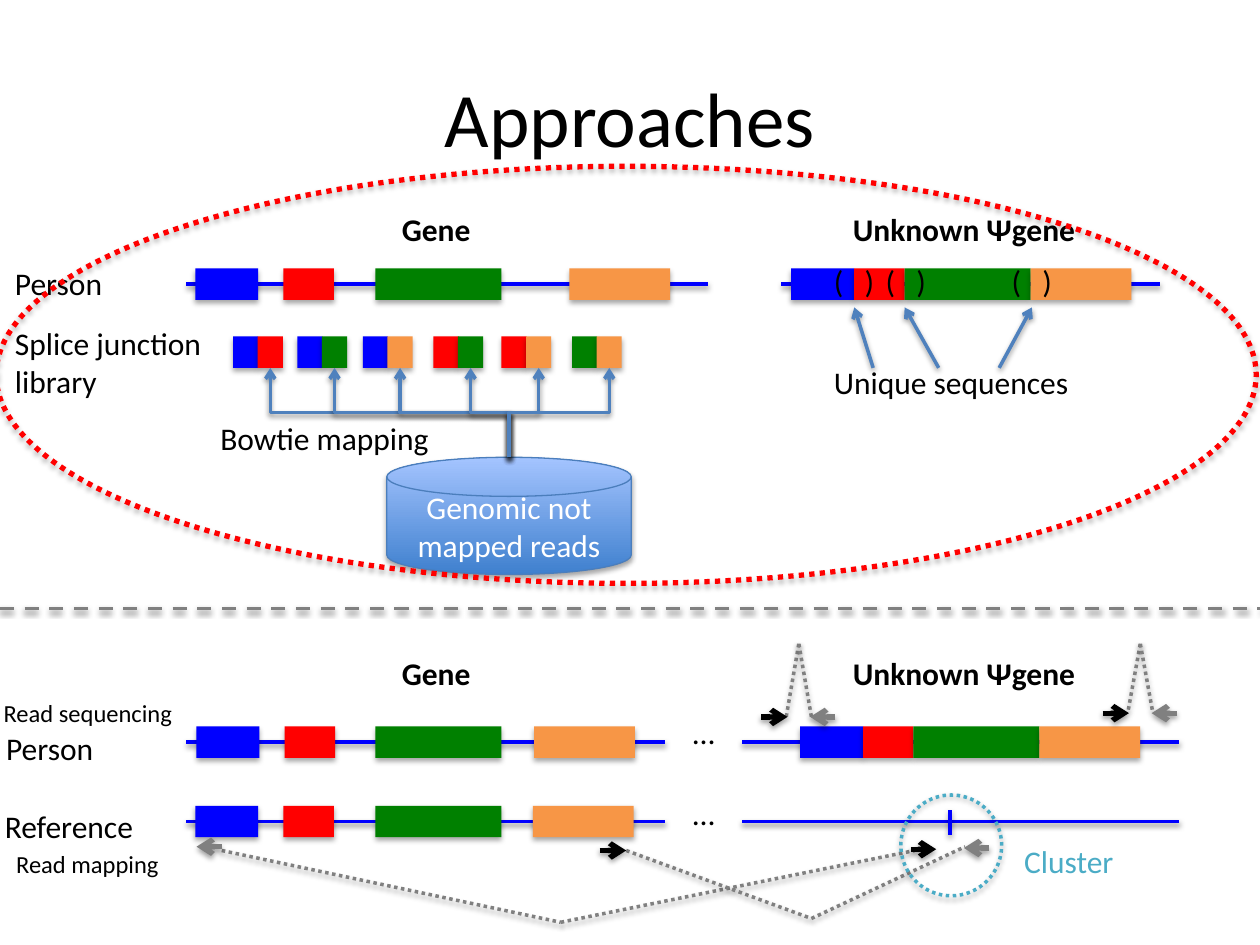
from dataclasses import dataclass
from itertools import accumulate, combinations

from lxml import etree
from pptx import Presentation
from pptx.dml.color import RGBColor
from pptx.enum.dml import MSO_LINE
from pptx.enum.shapes import MSO_CONNECTOR, MSO_SHAPE
from pptx.enum.text import MSO_ANCHOR, MSO_AUTO_SIZE, PP_ALIGN
from pptx.oxml.ns import qn
from pptx.util import Inches, Pt

STRAIGHT, ELBOW = MSO_CONNECTOR.STRAIGHT, MSO_CONNECTOR.ELBOW
RECT, OVAL, DISK = MSO_SHAPE.RECTANGLE, MSO_SHAPE.OVAL, MSO_SHAPE.FLOWCHART_MAGNETIC_DISK
DOTS, DASHES = MSO_LINE.ROUND_DOT, MSO_LINE.DASH
CENTER, MIDDLE = PP_ALIGN.CENTER, MSO_ANCHOR.MIDDLE
FIT_TEXT = MSO_AUTO_SIZE.SHAPE_TO_FIT_TEXT

FONT = "Calibri"
BLACK, WHITE, GREY = "000000", "FFFFFF", "808080"
BLUE, RED, GREEN, ORANGE = "0000FF", "FF0000", "008000", "F79646"
STEEL, TEAL = "4F81BD", "4BACC6"

# The slide is a grid of 100 columns and 75 rows
COLUMNS, ROWS = 100, 75
EXON_HEIGHT = 2.5


@dataclass(frozen=True)
class Exon:
    width: float
    color: str


@dataclass(frozen=True)
class Label:
    text: str
    left: float
    top: float
    width: float
    height: float = 4
    size: int = 18
    color: str = BLACK
    bold: bool = False


@dataclass(frozen=True)
class Strand:
    row: float
    start: float
    end: float
    exon_lefts: tuple = ()


EXONS = (Exon(5, BLUE), Exon(4, RED), Exon(10, GREEN), Exon(8, ORANGE))


def spliced(first_left: float) -> tuple:
    """Left edges of the exons when they touch each other."""
    return tuple(accumulate((exon.width for exon in EXONS[:-1]), initial=first_left))


STRANDS = (
    Strand(22.55, 14.8, 56.2, (15.5, 22.5, 29.8, 45.2)),
    Strand(22.55, 62, 92.1, spliced(62.8)),
    Strand(58.9, 14.8, 52.8, (15.6, 22.6, 29.8, 42.4)),
    Strand(58.9, 58.9, 93.6, spliced(63.5)),
    Strand(65.2, 14.8, 52.8, (15.5, 22.5, 29.8, 42.3)),
    Strand(65.2, 58.9, 93.6),
)
JUNCTION_LEFTS = (18.5, 23.6, 28.8, 34.4, 39.8, 45.4)

LABELS = (
    Label("Person", 0.2, 20.5, 9.1),
    Label("Splice junction\nlibrary", 0.2, 25.2, 16.9, 7.1),
    Label("Bowtie mapping", 16.5, 32.8, 18.7),
    Label("Unique sequences", 65.2, 28.3, 20.8),
    *(Label("(   )", left, 20.3, 5.3) for left in (65.2, 69.3, 79.3)),
    *(Label("Gene", 30.9, top, 7.5, bold=True) for top in (16.2, 51.4)),
    *(Label("Unknown Ψgene", 66.7, top, 19.9, bold=True) for top in (16.2, 51.4)),
    *(Label("…", 54, top, 3.8) for top in (56.1, 62.5)),
    Label("Person", -0.5, 57.4, 9.1),
    Label("Reference", -0.6, 63.6, 12.5),
    Label("Read mapping", 0.3, 66.9, 13.4, 3.4, size=14),
    Label("Read sequencing", -0.7, 54.9, 15.5, 3.4, size=14),
    Label("Cluster", 80.3, 66.3, 9.2, color=TEAL),
)

prs = Presentation()
prs.slide_width, prs.slide_height = Inches(10), Inches(7.5)
slide = prs.slides.add_slide(prs.slide_layouts[5])


def x(columns: float) -> int:
    return round(prs.slide_width * columns / COLUMNS)


def y(rows: float) -> int:
    return round(prs.slide_height * rows / ROWS)


def rgb(color: str) -> RGBColor:
    return RGBColor.from_string(color)


def add_shadow(part, opacity: int, distance: float) -> None:
    effects = etree.SubElement(part._element.spPr, qn("a:effectLst"))
    outer = etree.SubElement(effects, qn("a:outerShdw"), blurRad=str(Pt(3.1)),
                             dist=str(Pt(distance)), dir="5400000", rotWithShape="0")
    tint = etree.SubElement(outer, qn("a:srgbClr"), val=BLACK)
    etree.SubElement(tint, qn("a:alpha"), val=str(opacity * 1000))


def style_line(line, color: str, width: float, dash=None) -> None:
    line.color.rgb = rgb(color)
    line.width = Pt(width)
    if dash is not None:
        line.dash_style = dash


def format_text(frame, size: int, color: str, bold: bool = False) -> None:
    for paragraph in frame.paragraphs:
        for run in paragraph.runs:
            run.font.name, run.font.size, run.font.bold = FONT, Pt(size), bold
            run.font.color.rgb = rgb(color)


def add_label(label: Label) -> None:
    box = slide.shapes.add_textbox(x(label.left), y(label.top), x(label.width), y(label.height))
    frame = box.text_frame
    frame.text = label.text
    frame.word_wrap = False
    frame.auto_size = FIT_TEXT
    format_text(frame, label.size, label.color, label.bold)


def add_line(start: tuple, end: tuple, color: str, width: float = 2, dash=None,
             arrow: bool = False, kind=STRAIGHT):
    line = slide.shapes.add_connector(kind, x(start[0]), y(start[1]), x(end[0]), y(end[1]))
    style_line(line.line, color, width, dash)
    if arrow:
        etree.SubElement(line.line._get_or_add_ln(), qn("a:tailEnd"), type="arrow")
    add_shadow(line, 38, 1.6)
    return line


def add_upward_elbow(start: tuple, end: tuple) -> None:
    """Elbow that leaves and arrives vertically: a level one, turned a quarter."""
    middle_x, middle_y = (start[0] + end[0]) / 2, (start[1] + end[1]) / 2
    leftward = end[0] < start[0]
    half_rise = (start[1] - end[1]) / 2 * (1 if leftward else -1)
    half_run = abs(end[0] - start[0]) / 2
    elbow = add_line((middle_x - half_rise, middle_y + half_run),
                     (middle_x + half_rise, middle_y - half_run), STEEL, arrow=True, kind=ELBOW)
    elbow._element.spPr.find(qn("a:xfrm")).set("rot", "16200000" if leftward else "5400000")


def add_block(left: float, top: float, width: float, color: str) -> None:
    block = slide.shapes.add_shape(RECT, x(left), y(top), x(width), y(EXON_HEIGHT))
    block.fill.solid()
    block.fill.fore_color.rgb = rgb(color)
    block.line.fill.background()
    add_shadow(block, 35, 1.8)


def add_strand(strand: Strand) -> None:
    add_line((strand.start, strand.row), (strand.end, strand.row), BLUE)
    for exon, left in zip(EXONS, strand.exon_lefts):
        add_block(left, strand.row - EXON_HEIGHT / 2, exon.width, exon.color)


def add_ring(left: float, top: float, width: float, height: float, color: str, weight: float) -> None:
    ring = slide.shapes.add_shape(OVAL, x(left), y(top), x(width), y(height))
    ring.fill.background()
    style_line(ring.line, color, weight, DOTS)
    add_shadow(ring, 35, 1.8)


def add_read(tail: float, tip: float, row: float, color: str) -> None:
    add_line((tail, row), (tip, row), color, 3, arrow=True)


def add_read_pair(peak: float, row: float) -> None:
    for side in (-1, 1):
        add_line((peak, 51.1), (peak + side, row), GREY, dash=DOTS)
    add_read(peak - 3, peak - 0.9, row, BLACK)
    add_read(peak + 2.9, peak + 0.9, row, GREY)


# Title
title = slide.shapes.title
title.left, title.top, title.width, title.height = x(5), y(3), x(90), y(12.5)
title.text_frame.text = "Approaches"
title.text_frame.vertical_anchor = MIDDLE
title.text_frame.paragraphs[0].alignment = CENTER
format_text(title.text_frame, 44, BLACK)

# Genes, pseudogenes and reference
for strand in STRANDS:
    add_strand(strand)

# Store of unmapped reads
store = slide.shapes.add_shape(DISK, x(30.7), y(36.3), x(19.4), y(9.3))
store.fill.gradient()
store.fill.gradient_angle = 90
for stop, shade in zip(store.fill.gradient_stops, ("3F80CE", "A4C4FF")):
    stop.color.rgb = rgb(shade)
style_line(store.line, "4B7EBC", 0.75)
add_shadow(store, 35, 1.8)
store.text_frame.text = "Genomic not mapped reads"
store.text_frame.vertical_anchor = MIDDLE
store.text_frame.paragraphs[0].alignment = CENTER
format_text(store.text_frame, 18, WHITE)

# Splice junction library: every pair of exons, fed by the store
for left, pair in zip(JUNCTION_LEFTS, combinations(EXONS, 2)):
    for half, exon in enumerate(pair):
        add_block(left + 1.95 * half, 26.7, 2, exon.color)
    add_upward_elbow((40.4, 36.3), (left + 2.95, 29.2))

# Labels and pointers to the unique sequences
for label in LABELS:
    add_label(label)
for foot, junction in zip((69.3, 74.5, 79.3), (67.8, 71.8, 81.9)):
    add_line((foot, 29.2), (junction, 24.4), STEEL, arrow=True)

# Read pairs as sequenced
add_read_pair(63.4, 56.9)
add_read_pair(90.5, 56.6)

# Read pairs as mapped, meeting around the insertion point
add_line((75.4, 64.3), (75.4, 66.3), BLUE)
for left_end, dip, right_end in (((17.6, 67.5), (44.5, 73.2), (72.6, 67.5)),
                                 ((49.7, 67.5), (64.4, 72.9), (76.6, 67.2))):
    add_line(left_end, dip, GREY, dash=DOTS)
    add_line(dip, right_end, GREY, dash=DOTS)
for tail, tip, row, color in ((17.6, 15.6, 67.2, GREY), (72.3, 74.3, 67.4, BLACK),
                              (47.6, 49.7, 67.5, BLACK), (78.5, 76.5, 67.3, GREY)):
    add_read(tail, tip, row, color)
add_ring(71.5, 63.1, 8, 8, TEAL, 2)

# Divider and highlight of the upper approach
add_line((0, 48.3), (100, 48.3), GREY, dash=DASHES)
add_ring(-0.3, 13.2, 100, 33.1, RED, 3)

prs.save("out.pptx")
